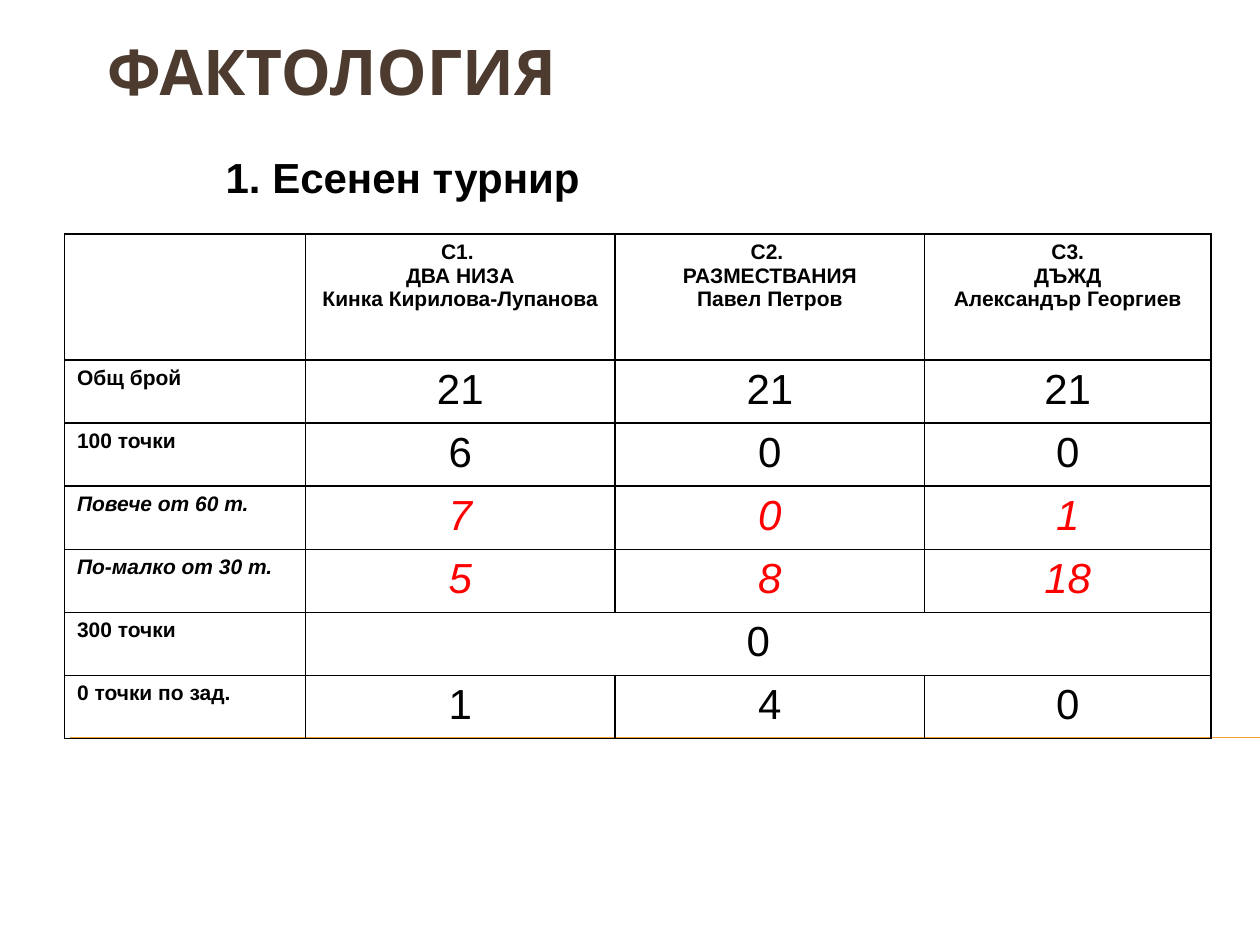
from lxml import etree
from pptx import Presentation
from pptx.dml.color import RGBColor
from pptx.enum.shapes import MSO_CONNECTOR
from pptx.enum.text import MSO_ANCHOR, PP_ALIGN
from pptx.oxml.ns import qn
from pptx.util import Cm, Pt

LEFT, CENTER = PP_ALIGN.LEFT, PP_ALIGN.CENTER
TOP, MIDDLE = MSO_ANCHOR.TOP, MSO_ANCHOR.MIDDLE
STRAIGHT = MSO_CONNECTOR.STRAIGHT

BROWN = RGBColor(0x4E, 0x3B, 0x30)
ORANGE = RGBColor(0xF0, 0xA2, 0x2E)
BLACK = RGBColor(0, 0, 0)
RED = RGBColor(0xFF, 0, 0)

TITLE = "ФАКТОЛОГИЯ"
SUBTITLE = "1. Есенен турнир"
TASKS = [
    ["С1. ", "ДВА НИЗА", "Кинка Кирилова-Лупанова"],
    ["С2. ", "РАЗМЕСТВАНИЯ", "Павел Петров"],
    ["С3.", "ДЪЖД", "Александър Георгиев"],
]
# label, values (a single value spans all tasks), highlighted
RESULTS = [
    ("Общ брой", ["21", "21", "21"], False),
    ("100 точки", ["6", "0", "0"], False),
    ("Повече от 60 т.", ["7", "0", "1"], True),
    ("По-малко от 30 т.", ["5", "8", "18"], True),
    ("300 точки", ["0"], False),
    ("0 точки по зад.", ["1", "4", "0"], False),
]
COLUMN_WIDTHS = [4.86, 6.24, 6.24, 5.77]
HEADER_HEIGHT, ROW_HEIGHT = 2.54, 1.27


def write(frame, lines, size, color=BLACK, bold=False, italic=False,
          align=LEFT, name="Arial"):
    for index, line in enumerate(lines):
        para = frame.add_paragraph() if index else frame.paragraphs[0]
        para.alignment = align
        span = para.add_run()
        span.text = line
        font = span.font
        font.name, font.size = name, Pt(size)
        font.bold, font.italic = bold, italic
        font.color.rgb = color


def add_borders(cell):
    properties = cell._tc.get_or_add_tcPr()
    for index, side in enumerate(("lnL", "lnR", "lnT", "lnB")):
        border = etree.Element(qn(f"a:{side}"), w=str(Pt(1)))
        fill = etree.SubElement(border, qn("a:solidFill"))
        etree.SubElement(fill, qn("a:srgbClr"), val=str(BLACK))
        properties.insert(index, border)


def add_results_table(page):
    table = page.shapes.add_table(
        len(RESULTS) + 1, len(COLUMN_WIDTHS), Cm(1.3), Cm(4.72),
        Cm(sum(COLUMN_WIDTHS)),
        Cm(HEADER_HEIGHT + ROW_HEIGHT * len(RESULTS))).table
    table.first_row = table.horz_banding = False
    for column, width in zip(table.columns, COLUMN_WIDTHS):
        column.width = Cm(width)
    for index, row in enumerate(table.rows):
        row.height = Cm(ROW_HEIGHT if index else HEADER_HEIGHT)
    for cell in table.iter_cells():
        cell.fill.background()
        add_borders(cell)

    for column, lines in enumerate(TASKS, 1):
        write(table.cell(0, column).text_frame, lines, 12, bold=True,
              align=CENTER)
    for row, (label, values, highlighted) in enumerate(RESULTS, 1):
        write(table.cell(row, 0).text_frame, [label], 12, bold=True,
              italic=highlighted)
        if len(values) == 1:
            table.cell(row, 1).merge(table.cell(row, len(TASKS)))
        for column, value in enumerate(values, 1):
            write(table.cell(row, column).text_frame, [value], 24,
                  RED if highlighted else BLACK, italic=highlighted,
                  align=CENTER)


def main():
    deck = Presentation()
    deck.slide_width, deck.slide_height = Cm(25.4), Cm(19.05)
    page = deck.slides.add_slide(deck.slide_layouts[5])

    rule = page.shapes.add_connector(
        STRAIGHT, Cm(1.42), Cm(14.86), deck.slide_width, Cm(14.86))
    rule.line.color.rgb = ORANGE
    rule.line.width = Pt(0.75)
    etree.SubElement(rule._element.spPr, qn("a:effectLst"))

    title = page.shapes.title
    title.left, title.top = Cm(1.9), Cm(0.53)
    title.width, title.height = Cm(22), Cm(2.59)
    title.text_frame.vertical_anchor = TOP
    write(title.text_frame, [TITLE], 36, BROWN, bold=True, name="Karla")

    box = page.shapes.add_textbox(Cm(4.3), Cm(2.92), Cm(7.65), Cm(1.27))
    box.text_frame.word_wrap = False
    box.text_frame.vertical_anchor = MIDDLE
    write(box.text_frame, [SUBTITLE], 24, bold=True)

    add_results_table(page)
    deck.save("out.pptx")


if __name__ == "__main__":
    main()
